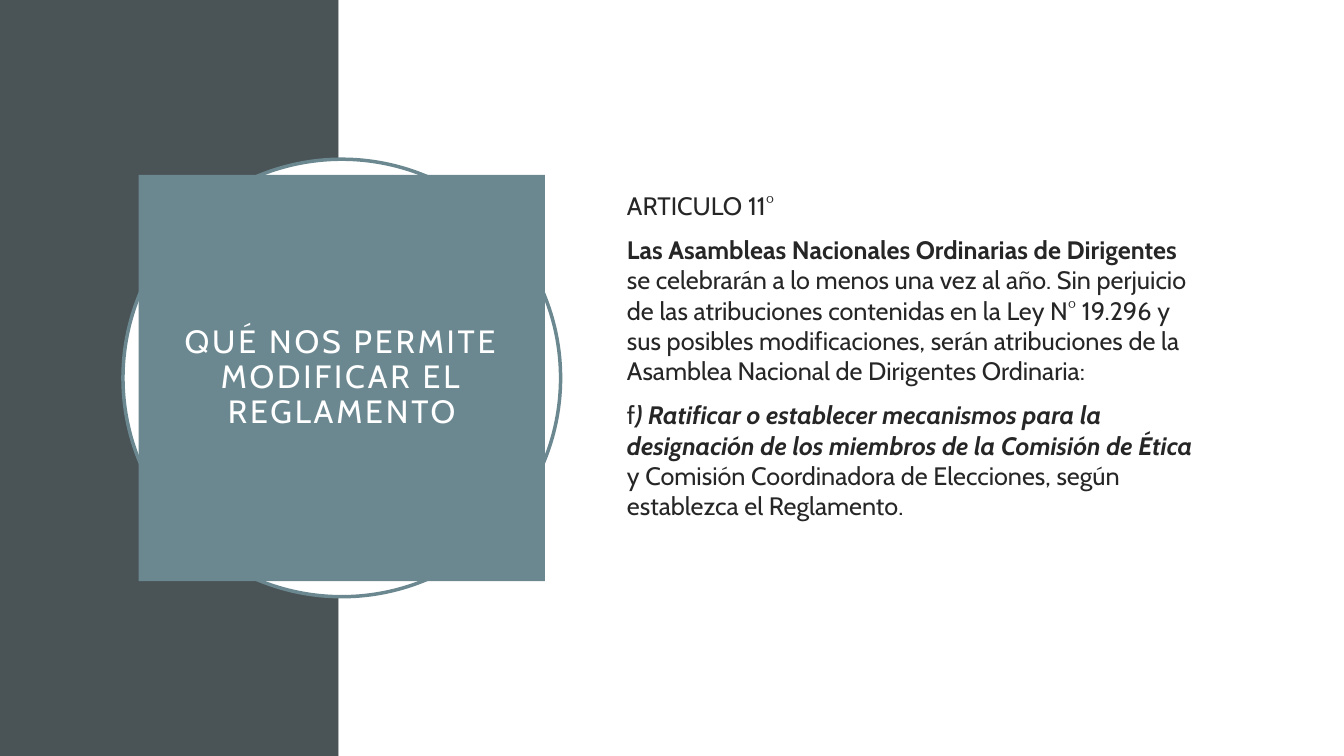
from pptx import Presentation
from pptx.dml.color import RGBColor
from pptx.enum.shapes import MSO_SHAPE
from pptx.enum.text import MSO_ANCHOR, PP_ALIGN
from pptx.util import Inches, Pt

WIDTH, HEIGHT = Inches(13.33), Inches(7.5)
SLATE = RGBColor(0x4A, 0x53, 0x56)
TEAL = RGBColor(0x6B, 0x88, 0x91)
WHITE = RGBColor(0xFF, 0xFF, 0xFF)
INK = RGBColor(0x26, 0x26, 0x26)
FONT = "Cabin"

BAND_WIDTH = Inches(3.36)
BADGE_CENTER = Inches(3.39), HEIGHT // 2
TITLE = "QUÉ NOS PERMITE MODIFICAR EL REGLAMENTO"

# Each paragraph is a list of (text, bold, italic)
ARTICLE = [
    [("ARTICULO 11°", False, False)],
    [("Las Asambleas Nacionales Ordinarias de Dirigentes ", True, False),
     ("se celebrarán a lo menos una vez al año. Sin perjuicio de las "
      "atribuciones contenidas en la Ley N° 19.296 y sus posibles "
      "modificaciones, serán atribuciones de la Asamblea Nacional de "
      "Dirigentes Ordinaria:", False, False)],
    [("f", False, False),
     (") Ratificar o establecer mecanismos para la designación de los "
      "miembros de la Comisión de Ética", True, True),
     (" y Comisión Coordinadora de Elecciones, según establezca el "
      "Reglamento.", False, False)],
]


def add_panel(slide, kind, left, top, width, height, fill, outline=None):
    shape = slide.shapes.add_shape(kind, left, top, width, height)
    shape.shadow.inherit = False
    shape.fill.solid()
    shape.fill.fore_color.rgb = fill
    if outline is None:
        shape.line.fill.background()
    else:
        shape.line.color.rgb = outline
        shape.line.width = Pt(2.5)
    return shape


def add_badge_part(slide, kind, size, fill, outline=None):
    """Add a shape of equal sides around the centre of the badge."""
    center_x, center_y = BADGE_CENTER
    return add_panel(slide, kind, center_x - size // 2, center_y - size // 2,
                     size, size, fill, outline)


def style_font(font, size, color):
    font.name = FONT
    font.size = Pt(size)
    font.color.rgb = color


def write_title(shape, text):
    frame = shape.text_frame
    frame.word_wrap = True
    frame.vertical_anchor = MSO_ANCHOR.MIDDLE
    frame.margin_left = frame.margin_right = Inches(0.2)
    frame.margin_top = frame.margin_bottom = Inches(0.2)
    paragraph = frame.paragraphs[0]
    paragraph.alignment = PP_ALIGN.CENTER
    paragraph.line_spacing = 0.9
    run = paragraph.add_run()
    run.text = text
    style_font(paragraph.font, 23, WHITE)
    style_font(run.font, 23, WHITE)
    # Letter spacing, in hundredths of a point
    run.font._element.set("spc", "200")


def add_article(slide, left, top, width, height, paragraphs):
    frame = slide.shapes.add_textbox(left, top, width, height).text_frame
    frame.word_wrap = True
    frame.vertical_anchor = MSO_ANCHOR.MIDDLE
    for index, runs in enumerate(paragraphs):
        paragraph = frame.add_paragraph() if index else frame.paragraphs[0]
        paragraph.space_before = Pt(10)
        for text, bold, italic in runs:
            run = paragraph.add_run()
            run.text = text
            style_font(run.font, 18, INK)
            run.font.bold = bold
            run.font.italic = italic


def main():
    presentation = Presentation()
    presentation.slide_width, presentation.slide_height = WIDTH, HEIGHT
    slide = presentation.slides.add_slide(presentation.slide_layouts[6])

    # Background: dark band and white area
    add_panel(slide, MSO_SHAPE.RECTANGLE, 0, 0, BAND_WIDTH, HEIGHT, SLATE)
    add_panel(slide, MSO_SHAPE.RECTANGLE, BAND_WIDTH, 0,
              WIDTH - BAND_WIDTH, HEIGHT, WHITE)

    # Title badge: ring behind a square
    add_badge_part(slide, MSO_SHAPE.OVAL, Inches(4.34), WHITE, TEAL)
    square = add_badge_part(slide, MSO_SHAPE.RECTANGLE, Inches(4.03), TEAL)
    write_title(square, TITLE)

    # Article text
    add_article(slide, Inches(6.12), Inches(1.53), Inches(5.82), Inches(3.99),
                ARTICLE)

    presentation.save("out.pptx")


if __name__ == "__main__":
    main()
